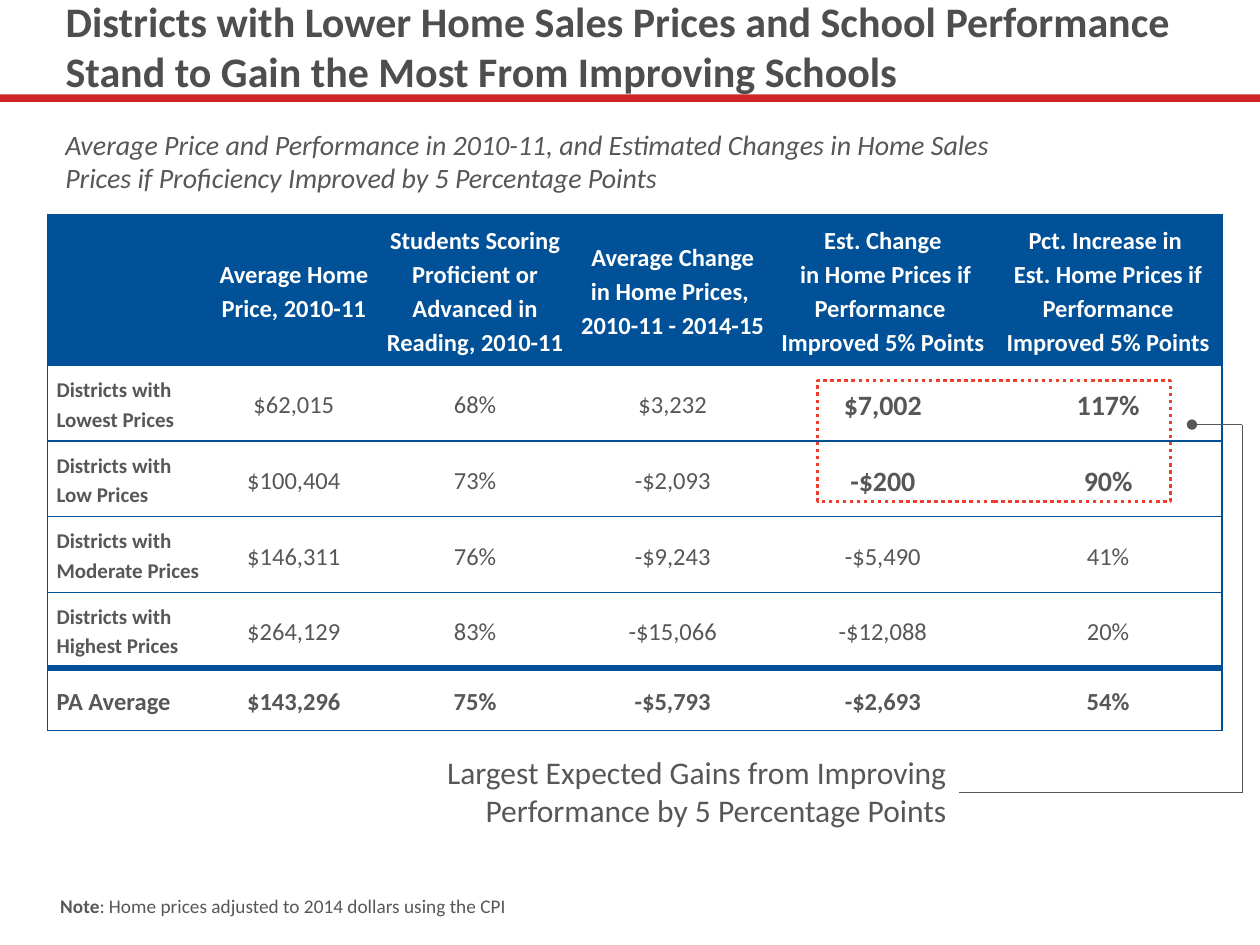
from pptx import Presentation
from pptx.dml.color import RGBColor
from pptx.enum.dml import MSO_LINE
from pptx.enum.shapes import MSO_CONNECTOR, MSO_SHAPE
from pptx.enum.text import MSO_ANCHOR as Anchor, PP_ALIGN as Align
from pptx.oxml.xmlchemy import OxmlElement
from pptx.util import Inches, Pt

WIDTH, HEIGHT = Inches(10), Inches(7.5)
FONT = "Calibri"
TITLE_GREY, GREY, WHITE = "4E4E4E", "565759", "FFFFFF"
BLUE, BORDER, RULE_RED, DOT_RED = "005198", "004F95", "D02526", "EF3E2D"
THIN, THICK = 0.75, 4

COLUMN_SHARES = [130, 131, 157, 157, 177, 181]
ROW_SHARES = [12, 6, 6, 6, 6, 5]
HEADERS = [
    "",
    "Average Home\nPrice, 2010-11",
    "Students Scoring Proficient or Advanced in Reading, 2010-11",
    "Average Change in Home Prices, \n2010-11 - 2014-15",
    "Est. Change\n in Home Prices if Performance \rImproved 5% Points",
    "Pct. Increase in \nEst. Home Prices if Performance Improved 5% Points",
]
ROWS = [
    ["Districts with Lowest Prices", "$62,015", "68%", "$3,232", "$7,002", "117%"],
    ["Districts with Low Prices", "$100,404", "73%", "-$2,093", "-$200", "90%"],
    ["Districts with Moderate Prices", "$146,311", "76%", "-$9,243", "-$5,490", "41%"],
    ["Districts with Highest Prices", "$264,129", "83%", "-$15,066", "-$12,088", "20%"],
    ["PA Average", "$143,296", "75%", "-$5,793", "-$2,693", "54%"],
]


def color(value):
    return RGBColor.from_string(value)


def across(percent):
    return round(WIDTH * percent / 100)


def down(percent):
    return round(HEIGHT * percent / 100)


def area(left, top, width, height):
    return across(left), down(top), across(width), down(height)


def add_span(para, text, size, tone, bold=False, italic=False):
    for index, line in enumerate(text.split("\n")):
        if index:
            para.add_line_break()
        span = para.add_run()
        span.text = line
        font = span.font
        font.name, font.size, font.bold, font.italic = FONT, Pt(size), bold, italic
        font.color.rgb = color(tone)


def add_text(page, box, spans, align=Align.LEFT, wrap=True):
    shape = page.shapes.add_textbox(*box)
    shape.text_frame.word_wrap = wrap
    para = shape.text_frame.paragraphs[0]
    para.alignment = align
    for text, style in spans:
        add_span(para, text, **style)
    return shape


def add_rectangle(page, box):
    shape = page.shapes.add_shape(MSO_SHAPE.RECTANGLE, *box)
    shape.shadow.inherit = False
    return shape


def add_heading(page, box, rule_box):
    rule = add_rectangle(page, rule_box)
    rule.fill.solid()
    rule.fill.fore_color.rgb = color(RULE_RED)
    rule.line.fill.background()
    title = page.shapes.title
    title._element.addprevious(rule._element)
    title.left, title.top, title.width, title.height = box
    frame = title.text_frame
    frame.word_wrap = True
    frame.vertical_anchor = Anchor.MIDDLE
    para = frame.paragraphs[0]
    para.alignment = Align.LEFT
    add_span(para, "Districts with Lower Home Sales Prices and School Performance "
             "Stand to Gain the Most From Improving Schools", 24, TITLE_GREY, bold=True)


def set_border(cell, side, width):
    line = OxmlElement(f"a:ln{side}")
    if width:
        line.set("w", str(Pt(width)))
        fill = OxmlElement("a:solidFill")
        tone = OxmlElement("a:srgbClr")
        tone.set("val", BLUE if width == THICK else BORDER)
        fill.append(tone)
    else:
        fill = OxmlElement("a:noFill")
    line.append(fill)
    cell._tc.get_or_add_tcPr().append(line)


def cell_style(row, column):
    if row == 0:
        return 14, WHITE, True
    if row == len(ROWS):
        return 14, GREY, True
    if column == 0:
        return 12, GREY, True
    if row <= 2 and column >= 4:
        return 16, GREY, True
    return 14, GREY, False


def fill_cell(cell, row, column, text):
    last_row, last_column = len(ROWS), len(HEADERS) - 1
    set_border(cell, "L", THIN if column == 0 else 0)
    set_border(cell, "R", THIN if column == last_column else 0)
    set_border(cell, "T", THICK if row == last_row else THIN)
    set_border(cell, "B", THICK if row == last_row - 1 else THIN)
    if row:
        cell.fill.background()
    else:
        cell.fill.solid()
        cell.fill.fore_color.rgb = color(BLUE)
    side, edge = (0.07, 0) if row else (0.05, 0.05)
    cell.margin_left = cell.margin_right = Inches(side)
    cell.margin_top = cell.margin_bottom = Inches(edge)
    cell.vertical_anchor = Anchor.MIDDLE
    frame = cell.text_frame
    for index, part in enumerate(text.split("\r")):
        para = frame.add_paragraph() if index else frame.paragraphs[0]
        para.alignment = Align.CENTER if column else Align.LEFT
        para.line_spacing = 1.15
        if part:
            add_span(para, part, *cell_style(row, column))


def add_price_table(page, box):
    table = page.shapes.add_table(len(ROW_SHARES), len(COLUMN_SHARES), *box).table
    table.first_row = table.horz_banding = False
    for column, share in zip(table.columns, COLUMN_SHARES):
        column.width = round(box[2] * share / sum(COLUMN_SHARES))
    for row, share in zip(table.rows, ROW_SHARES):
        row.height = round(box[3] * share / sum(ROW_SHARES))
    for row, texts in enumerate([HEADERS] + ROWS):
        for column, text in enumerate(texts):
            fill_cell(table.cell(row, column), row, column, text)


def add_highlight(page, box):
    frame = add_rectangle(page, box)
    frame.fill.background()
    frame.line.color.rgb = color(DOT_RED)
    frame.line.width = Pt(2)
    frame.line.dash_style = MSO_LINE.ROUND_DOT


def add_bracket(page, box, dot_x):
    left, top, width, height = box
    right, bottom = left + width, top + height
    segments = [(right, top, dot_x, top), (right, top, right, bottom),
                (left, bottom, right, bottom)]
    for index, ends in enumerate(segments):
        line = page.shapes.add_connector(MSO_CONNECTOR.STRAIGHT, *ends)
        line.line.color.rgb = color(GREY)
        line.line.width = Pt(THIN)
        if index == 0:
            dot = OxmlElement("a:tailEnd")
            dot.set("type", "oval")
            line.line._get_or_add_ln().append(dot)
        line._element.spPr.append(OxmlElement("a:effectLst"))


def add_callout(page, box):
    text = "Largest Expected Gains from Improving Performance by 5 Percentage Points"
    shape = add_text(page, box, [(text, dict(size=18, tone=GREY))], Align.RIGHT)
    shape.fill.solid()
    shape.fill.fore_color.rgb = color(WHITE)


def build_page(deck):
    page = deck.slides.add_slide(deck.slide_layouts[5])
    add_heading(page, area(4.2, 0.67, 93.3, 8.27), area(0, 10, 100, 0.8))
    subtitle = ("Average Price and Performance in 2010-11, and Estimated Changes in "
                "Home Sales Prices if Proficiency Improved by 5 Percentage Points")
    add_text(page, area(4.2, 12.8, 77.5, 8.53),
             [(subtitle, dict(size=16, tone=GREY, italic=True))])
    add_price_table(page, area(3.8, 22.67, 93.2, 54.67))
    add_highlight(page, area(64.9, 40.27, 28, 12.8))
    add_bracket(page, area(72.1, 44.93, 26.5, 38.94), across(94.6))
    add_callout(page, area(31.9, 79.07, 44.2, 9.47))
    add_text(page, area(3.8, 94, 37.7, 3.87),
             [("Note", dict(size=11, tone=GREY, bold=True)),
              (": Home prices adjusted to 2014 dollars using the CPI",
               dict(size=11, tone=GREY))], wrap=False)


def main():
    deck = Presentation()
    deck.slide_width, deck.slide_height = WIDTH, HEIGHT
    build_page(deck)
    deck.save("out.pptx")


if __name__ == "__main__":
    main()
